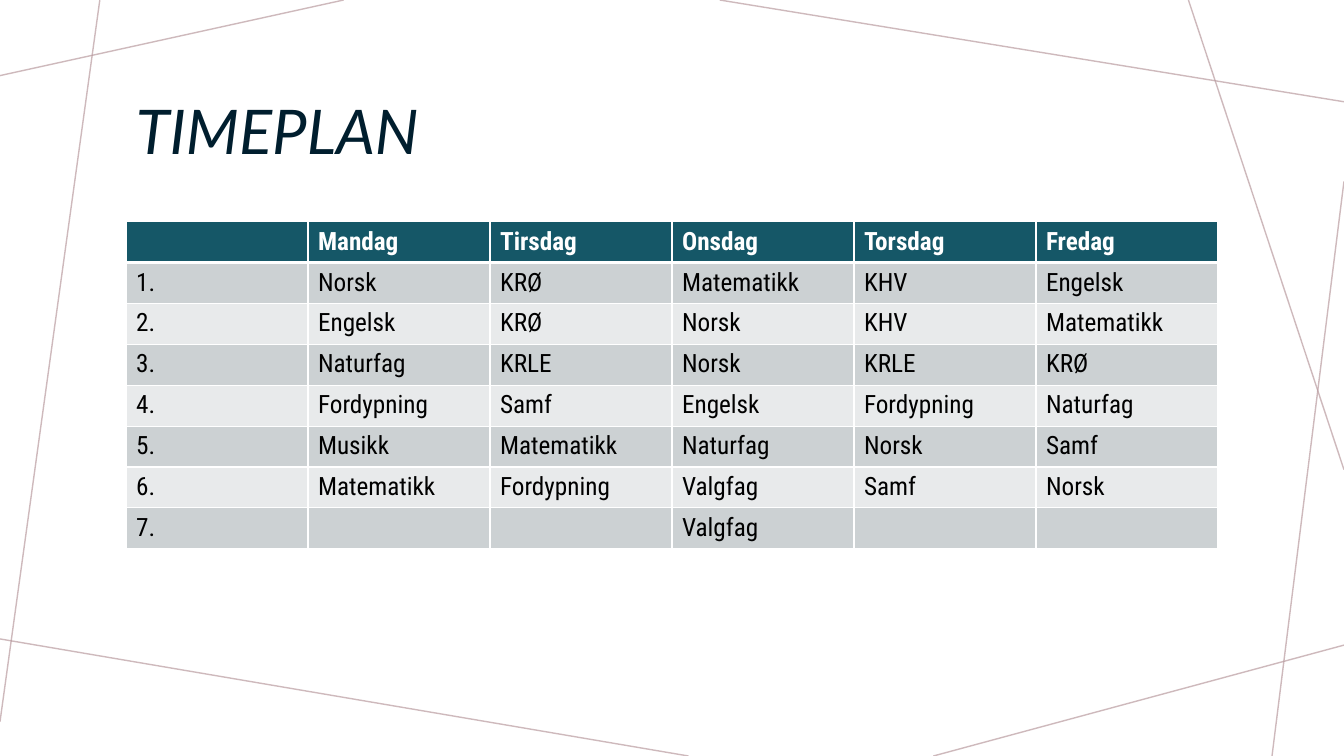
import pptx
import pptx.util
import pptx.dml.color
import pptx.enum.shapes
import pptx.enum.text
import pptx.oxml
import pptx.oxml.ns
import lxml.etree

Pt = pptx.util.Pt
qn = pptx.oxml.ns.qn


def color(hex_string):
    return pptx.dml.color.RGBColor.from_string(hex_string)


def add_span(para, text, font, size, hex_string):
    span = para.add_run()
    span.text = text
    span.font.name = font
    span.font.size = Pt(size)
    span.font.color.rgb = color(hex_string)
    return span


deck = pptx.Presentation()
deck.slide_width, deck.slide_height = Pt(960), Pt(540)
page = deck.slides.add_slide(deck.slide_layouts[6])
page.background.fill.solid()
page.background.fill.fore_color.rgb = color("FFFFFF")

# Thin lines crossing the edges of the page
edge_lines = [
    (245.5, 0, 0, 54),
    (71.3, 0, 0, 515.5),
    (491.8, 540, 0, 456.4),
    (960, 460.8, 666.7, 540),
    (960, 129.6, 908.6, 540),
    (960, 335.5, 848.9, 0),
    (960, 72.7, 514.1, 0),
]
for ends in edge_lines:
    line = page.shapes.add_connector(
        pptx.enum.shapes.MSO_CONNECTOR.STRAIGHT, *[Pt(end) for end in ends])
    line.line.width = Pt(1)
    line.line.color.rgb = color("BA9CA0")
    tint = next(line._element.spPr.iter(qn("a:srgbClr")))
    lxml.etree.SubElement(tint, qn("a:alpha"), val="70000")
    lxml.etree.SubElement(line._element.spPr, qn("a:effectLst"))

# Title
box = page.shapes.add_textbox(Pt(90), Pt(41.8), Pt(780), Pt(108.7))
box.text_frame.word_wrap = True
box.text_frame.vertical_anchor = pptx.enum.text.MSO_ANCHOR.MIDDLE
para = box.text_frame.paragraphs[0]
para.line_spacing = 0.9
add_span(para, "TIMEPLAN", "Lato", 44, "001E2E").font.italic = True

# Timetable
lessons = [
    ["", "Mandag", "Tirsdag", "Onsdag", "Torsdag", "Fredag"],
    ["1.", "Norsk", "KRØ", "Matematikk", "KHV", "Engelsk"],
    ["2.", "Engelsk", "KRØ", "Norsk", "KHV", "Matematikk"],
    ["3.", "Naturfag", "KRLE", "Norsk", "KRLE", "KRØ"],
    ["4.", "Fordypning", "Samf", "Engelsk", "Fordypning", "Naturfag"],
    ["5.", "Musikk", "Matematikk", "Naturfag", "Norsk", "Samf"],
    ["6.", "Matematikk", "Fordypning", "Valgfag", "Samf", "Norsk"],
    ["7.", "", "", "Valgfag", "", ""],
]
timetable = page.shapes.add_table(
    len(lessons), len(lessons[0]), Pt(90), Pt(158.4), Pt(780), Pt(233.6)).table

for row, texts in enumerate(lessons):
    header = row == 0
    fill = "155767" if header else ("E8EAEB", "CCD1D3")[row % 2]
    for column, text in enumerate(texts):
        cell = timetable.cell(row, column)

        # White borders, heavier between the header and the first lesson
        for side in "LRTB":
            heavy = (row, side) in [(0, "B"), (1, "T")]
            border = lxml.etree.SubElement(
                cell._tc.get_or_add_tcPr(), qn("a:ln" + side),
                w=str(Pt(3 if heavy else 1)))
            paint = lxml.etree.SubElement(border, qn("a:solidFill"))
            lxml.etree.SubElement(paint, qn("a:srgbClr"), val="FFFFFF")

        cell.fill.solid()
        cell.fill.fore_color.rgb = color(fill)
        if text:
            span = add_span(cell.text_frame.paragraphs[0], text, "Roboto Condensed",
                            18, "FFFFFF" if header else "000000")
            span.font.bold = header

deck.save("out.pptx")
